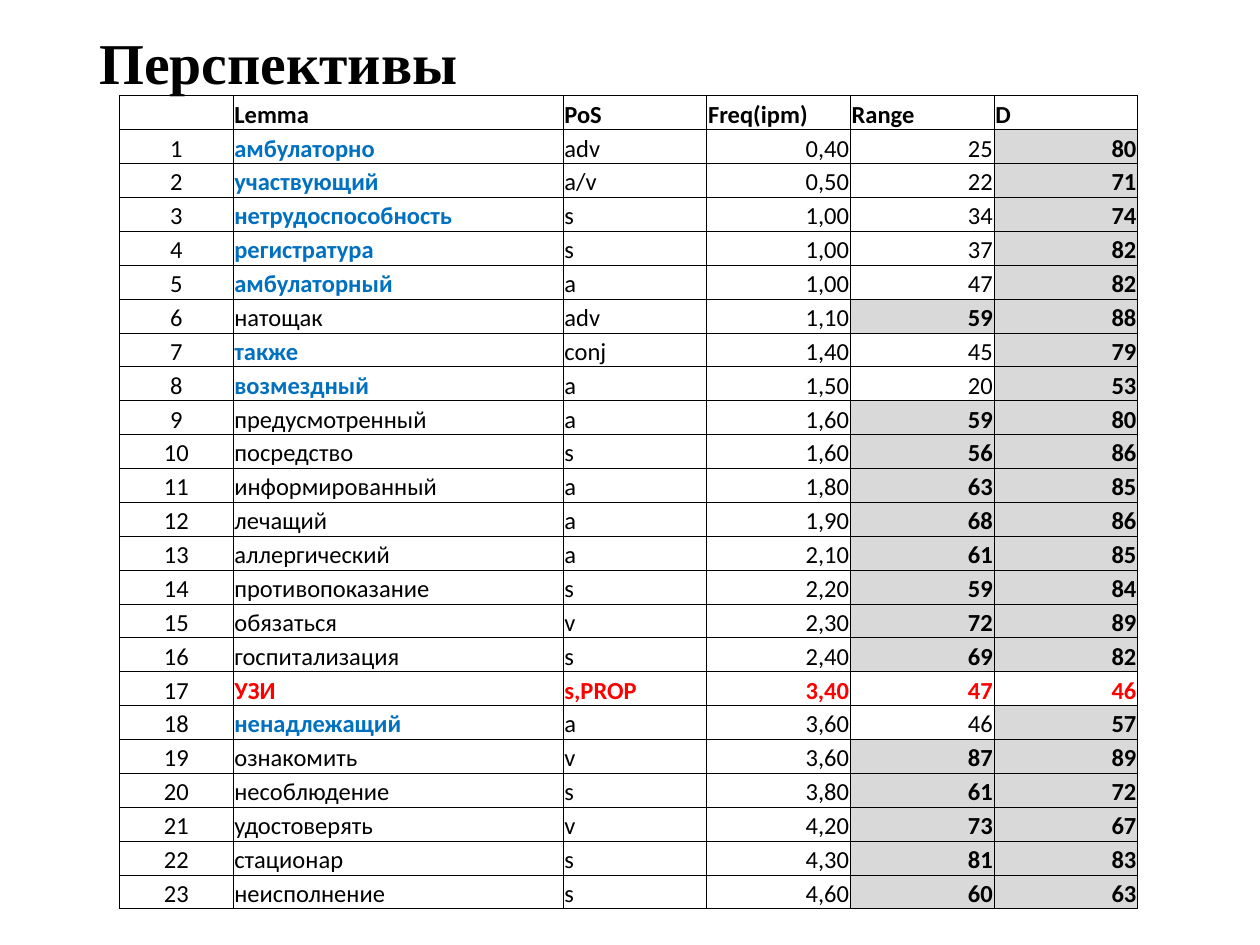
from dataclasses import dataclass
from typing import NamedTuple

from lxml.etree import SubElement
from pptx import Presentation
from pptx.dml.color import RGBColor
from pptx.enum.text import MSO_ANCHOR, PP_ALIGN
from pptx.oxml.ns import qn
from pptx.slide import Slide
from pptx.table import _Cell
from pptx.text.text import _Paragraph
from pptx.util import Inches, Pt


@dataclass(frozen=True)
class Theme:
    title_font: str = "Times New Roman"
    table_font: str = "Calibri"
    title_size: int = 33
    table_size: int = 14
    border_width: float = 0.5
    black: str = "000000"
    blue: str = "0070C0"
    red: str = "FF0000"
    shade: str = "D9D9D9"


class Entry(NamedTuple):
    lemma: str
    part_of_speech: str
    frequency: str
    text_range: int
    dispersion: int


class CellStyle(NamedTuple):
    alignment: PP_ALIGN = PP_ALIGN.LEFT
    color: str = "000000"
    bold: bool = False
    shaded: bool = False


THEME = Theme()
THRESHOLD = 50
HEADERS = ("", "Lemma", "PoS", "Freq(ipm)", "Range", "D")
COLUMN_WIDTHS = (0.9, 2.62, 1.14, 1.14, 1.14, 1.14)
ALIGNMENTS = (PP_ALIGN.CENTER,) + (PP_ALIGN.LEFT,) * 2 + (PP_ALIGN.RIGHT,) * 3
ENTRIES = (
    Entry("амбулаторно", "adv", "0,40", 25, 80),
    Entry("участвующий", "а/v", "0,50", 22, 71),
    Entry("нетрудоспособность", "s", "1,00", 34, 74),
    Entry("регистратура", "s", "1,00", 37, 82),
    Entry("амбулаторный", "a", "1,00", 47, 82),
    Entry("натощак", "adv", "1,10", 59, 88),
    Entry("также", "conj", "1,40", 45, 79),
    Entry("возмездный", "a", "1,50", 20, 53),
    Entry("предусмотренный", "a", "1,60", 59, 80),
    Entry("посредство", "s", "1,60", 56, 86),
    Entry("информированный", "a", "1,80", 63, 85),
    Entry("лечащий", "a", "1,90", 68, 86),
    Entry("аллергический", "a", "2,10", 61, 85),
    Entry("противопоказание", "s", "2,20", 59, 84),
    Entry("обязаться", "v", "2,30", 72, 89),
    Entry("госпитализация", "s", "2,40", 69, 82),
    Entry("УЗИ", "s,PROP", "3,40", 47, 46),
    Entry("ненадлежащий", "a", "3,60", 46, 57),
    Entry("ознакомить", "v", "3,60", 87, 89),
    Entry("несоблюдение", "s", "3,80", 61, 72),
    Entry("удостоверять", "v", "4,20", 73, 67),
    Entry("стационар", "s", "4,30", 81, 83),
    Entry("неисполнение", "s", "4,60", 60, 63),
)


def set_font(paragraph: _Paragraph, name: str, size: int, color: str, bold: bool) -> None:
    font = paragraph.font
    font.name = name
    font.size = Pt(size)
    font.bold = bold
    font.color.rgb = RGBColor.from_string(color)


def add_borders(cell: _Cell) -> None:
    properties = cell._tc.get_or_add_tcPr()
    for side in ("a:lnL", "a:lnR", "a:lnT", "a:lnB"):
        line = SubElement(properties, qn(side), w=str(Pt(THEME.border_width)))
        fill = SubElement(line, qn("a:solidFill"))
        SubElement(fill, qn("a:srgbClr"), val=THEME.black)


def fill_cell(cell: _Cell, text: str, style: CellStyle) -> None:
    cell.margin_left = cell.margin_right = cell.margin_top = Inches(0.01)
    cell.margin_bottom = 0
    cell.vertical_anchor = MSO_ANCHOR.BOTTOM
    add_borders(cell)
    if style.shaded:
        cell.fill.solid()
        cell.fill.fore_color.rgb = RGBColor.from_string(THEME.shade)
    else:
        cell.fill.background()
    paragraph = cell.text_frame.paragraphs[0]
    paragraph.alignment = style.alignment
    set_font(paragraph, THEME.table_font, THEME.table_size, style.color, style.bold)
    if text:
        paragraph.add_run().text = text
    else:
        SubElement(paragraph._p, qn("a:endParaRPr"), sz=str(THEME.table_size * 100))


def entry_style(entry: Entry, column: int) -> CellStyle:
    alignment = ALIGNMENTS[column]
    if column == 0:
        return CellStyle(alignment)
    if max(entry.text_range, entry.dispersion) <= THRESHOLD:
        return CellStyle(alignment, THEME.red, bold=True)
    if column == 1 and entry.text_range <= THRESHOLD:
        return CellStyle(alignment, THEME.blue, bold=True)
    shaded = column >= 4 and entry[column - 1] > THRESHOLD
    return CellStyle(alignment, THEME.black, bold=shaded, shaded=shaded)


def add_title(slide: Slide, text: str) -> None:
    shape = slide.shapes.add_textbox(Inches(0.69), Inches(0.21), Inches(8.62), Inches(0.63))
    frame = shape.text_frame
    frame.word_wrap = True
    frame.vertical_anchor = MSO_ANCHOR.MIDDLE
    paragraph = frame.paragraphs[0]
    paragraph.line_spacing = 0.9
    paragraph.add_run().text = text
    set_font(paragraph, THEME.title_font, THEME.title_size, THEME.black, True)


def add_lemma_table(slide: Slide) -> None:
    table = slide.shapes.add_table(
        len(ENTRIES) + 1, len(HEADERS), Inches(0.95), Inches(0.76), Inches(8.09), Inches(6.46)
    ).table
    table.first_row = False
    table.horz_banding = False
    for column, width in zip(table.columns, COLUMN_WIDTHS):
        column.width = Inches(width)
    for column, header in enumerate(HEADERS):
        fill_cell(table.cell(0, column), header, CellStyle(bold=True))
    for row, entry in enumerate(ENTRIES, start=1):
        for column, value in enumerate((row, *entry)):
            fill_cell(table.cell(row, column), str(value), entry_style(entry, column))


def main() -> None:
    presentation = Presentation()
    presentation.slide_width = Inches(10)
    presentation.slide_height = Inches(7.5)
    slide = presentation.slides.add_slide(presentation.slide_layouts[6])
    add_title(slide, "Перспективы")
    add_lemma_table(slide)
    presentation.save("out.pptx")


if __name__ == "__main__":
    main()
